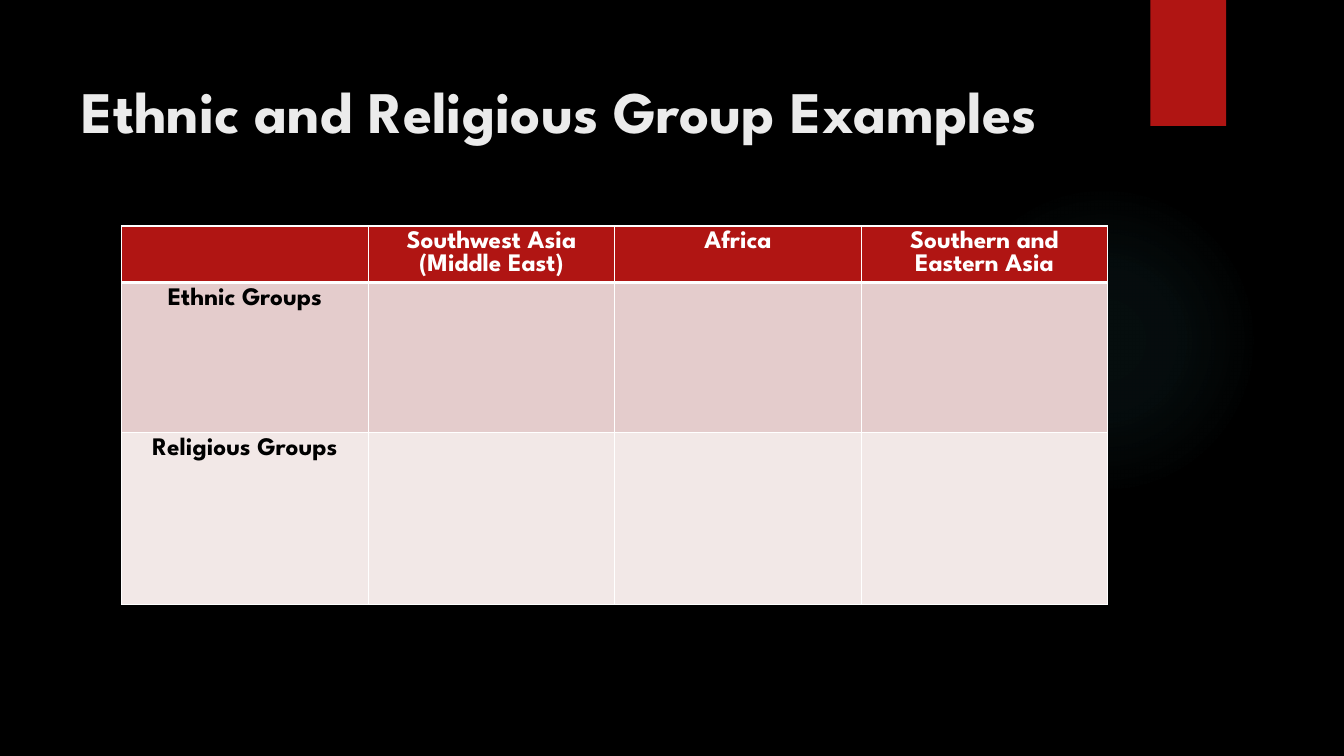
from dataclasses import dataclass

import pptx
import pptx.dml.color
import pptx.enum.shapes
import pptx.enum.text
import pptx.oxml
import pptx.oxml.ns
import pptx.util

Pt = pptx.util.Pt
RGBColor = pptx.dml.color.RGBColor

FONT = "League Spartan"
BLACK = RGBColor(0x00, 0x00, 0x00)
WHITE = RGBColor(0xFF, 0xFF, 0xFF)
TITLE_GREY = RGBColor(0xEB, 0xEB, 0xEB)
RED = RGBColor(0xB0, 0x15, 0x13)
ROSE = RGBColor(0xE4, 0xCC, 0xCC)
PALE_ROSE = RGBColor(0xF2, 0xE8, 0xE7)
TEAL = RGBColor(0x50, 0xB9, 0xC1)

GLOW_STOPS = ((0, 7), (36, 6), (69, 0))  # position and opacity, in percent
COLUMN_WIDTH = 176.1


@dataclass(frozen=True)
class TableRow:
    labels: tuple[str, ...]
    height: float
    fill: RGBColor
    ink: RGBColor
    rule_below: float = 1


ROWS = (
    TableRow(("", "Southwest Asia (Middle East)", "Africa", "Southern and Eastern Asia"),
             40.3, RED, WHITE, rule_below=3),
    TableRow(("Ethnic Groups", "", "", ""), 107.3, ROSE, BLACK),
    TableRow(("Religious Groups", "", "", ""), 122.5, PALE_ROSE, BLACK),
)


def style_font(font, size: float, color: RGBColor) -> None:
    font.name = FONT
    font.size = Pt(size)
    font.bold = True
    font.color.rgb = color


def add_plain_shape(page, kind, left: float, top: float, width: float, height: float):
    shape = page.shapes.add_shape(kind, Pt(left), Pt(top), Pt(width), Pt(height))
    shape.shadow.inherit = False
    shape.line.fill.background()
    return shape


def fill_with_glow(shape, color: RGBColor) -> None:
    stops = "".join(
        f'<a:gs pos="{position * 1000}"><a:srgbClr val="{color}">'
        f'<a:alpha val="{opacity * 1000}"/></a:srgbClr></a:gs>'
        for position, opacity in GLOW_STOPS)
    gradient = pptx.oxml.parse_xml(
        f'<a:gradFill {pptx.oxml.ns.nsdecls("a")}><a:gsLst>{stops}</a:gsLst>'
        '<a:path path="circle"><a:fillToRect l="50000" t="50000" r="50000" b="50000"/>'
        '</a:path></a:gradFill>')
    shape.fill.background()
    properties = shape.element.spPr
    properties.replace(properties.find(pptx.oxml.ns.qn("a:noFill")), gradient)


def set_borders(cell, rule_above: float, rule_below: float) -> None:
    properties = cell._tc.get_or_add_tcPr()
    widths = {"lnL": 1, "lnR": 1, "lnT": rule_above, "lnB": rule_below}
    for index, (side, width) in enumerate(widths.items()):
        properties.insert(index, pptx.oxml.parse_xml(
            f'<a:{side} {pptx.oxml.ns.nsdecls("a")} w="{Pt(width)}"><a:solidFill>'
            f'<a:srgbClr val="{WHITE}"/></a:solidFill></a:{side}>'))


def add_group_table(page, left: float, top: float) -> None:
    column_count = len(ROWS[0].labels)
    table = page.shapes.add_table(
        len(ROWS), column_count, Pt(left), Pt(top), Pt(COLUMN_WIDTH * column_count),
        Pt(sum(row.height for row in ROWS))).table
    table.horz_banding = False
    for column in table.columns:
        column.width = Pt(COLUMN_WIDTH)
    rule_above = 1
    for row_index, row in enumerate(ROWS):
        table.rows[row_index].height = Pt(row.height)
        for column_index, label in enumerate(row.labels):
            cell = table.cell(row_index, column_index)
            cell.fill.solid()
            cell.fill.fore_color.rgb = row.fill
            set_borders(cell, rule_above, row.rule_below)
            if label:
                cell.text_frame.text = label
                para = cell.text_frame.paragraphs[0]
                para.alignment = pptx.enum.text.PP_ALIGN.CENTER
                style_font(para.runs[0].font, 18, row.ink)
        rule_above = row.rule_below


def add_title(page, text: str) -> None:
    title = page.shapes.title
    title.left, title.top, title.width, title.height = Pt(51.1), Pt(36), Pt(740.9), Pt(110.2)
    frame = title.text_frame
    frame.text = text
    frame.word_wrap = True
    frame.auto_size = pptx.enum.text.MSO_AUTO_SIZE.NONE
    frame.vertical_anchor = pptx.enum.text.MSO_ANCHOR.TOP
    frame.margin_top = Pt(17)
    para = frame.paragraphs[0]
    para.alignment = pptx.enum.text.PP_ALIGN.LEFT
    style_font(para.runs[0].font, 42, TITLE_GREY)


def main() -> None:
    deck = pptx.Presentation()
    deck.slide_width, deck.slide_height = Pt(960), Pt(540)
    page = deck.slides.add_slide(deck.slide_layouts[5])
    page.background.fill.solid()
    page.background.fill.fore_color.rgb = BLACK

    # Backdrop: soft glow and red tab
    shapes = pptx.enum.shapes.MSO_SHAPE
    glow = add_plain_shape(page, shapes.OVAL, 677.5, 131.8, 221.8, 221.8)
    fill_with_glow(glow, TEAL)
    tab = add_plain_shape(page, shapes.RECTANGLE, 821.8, 0, 54, 90)
    tab.fill.solid()
    tab.fill.fore_color.rgb = RED

    # Title and table
    add_title(page, "Ethnic and Religious Group Examples")
    add_group_table(page, 86.9, 161.4)

    deck.save("out.pptx")


if __name__ == "__main__":
    main()
